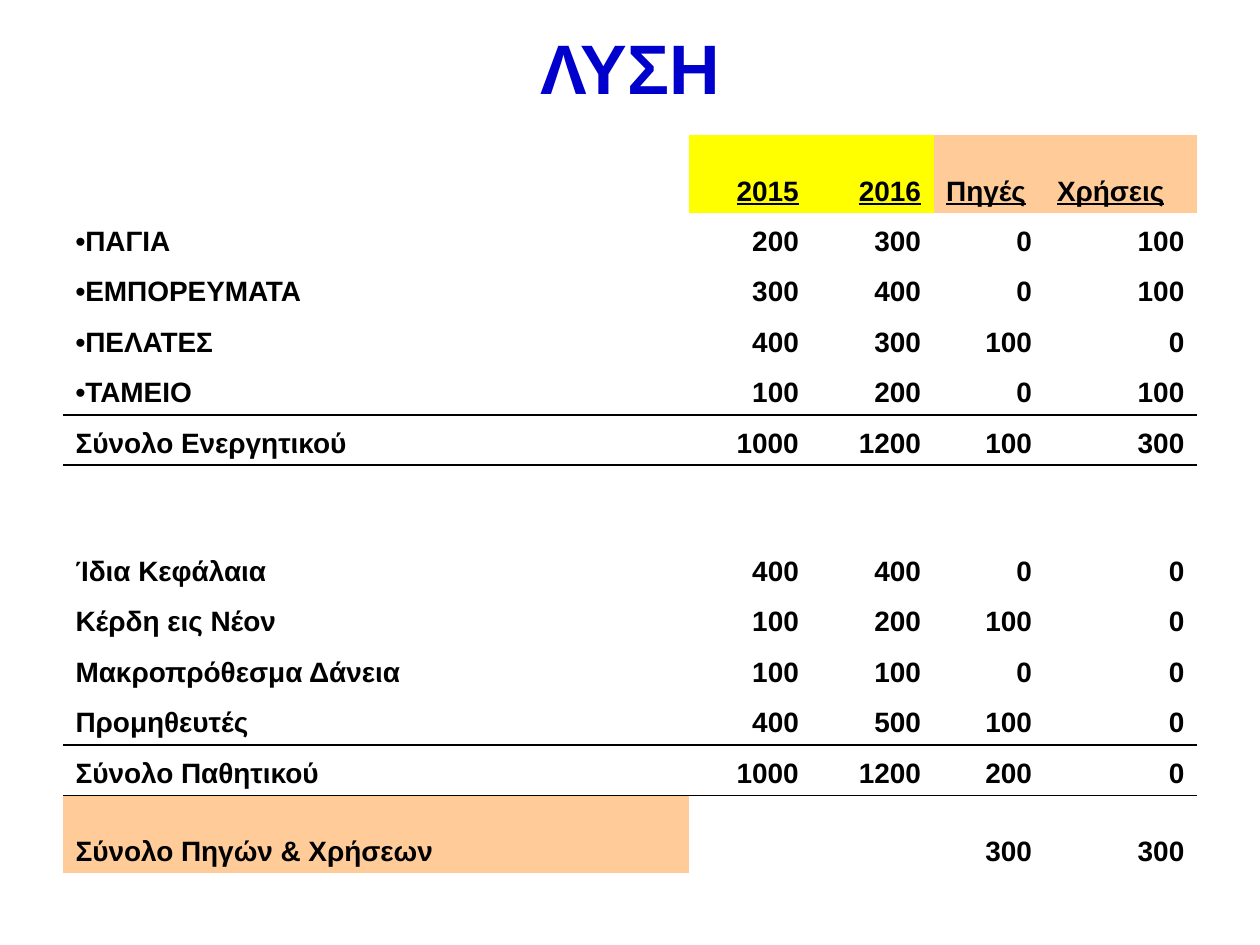
from dataclasses import dataclass

from lxml.etree import SubElement
from pptx import Presentation
from pptx.dml.color import RGBColor as RGB
from pptx.enum.text import MSO_ANCHOR as ANCHOR, MSO_AUTO_SIZE as AUTO, PP_ALIGN as ALIGN
from pptx.oxml import parse_xml
from pptx.oxml.ns import nsdecls, qn
from pptx.util import Inches, Pt


@dataclass(frozen=True)
class Theme:
    font: str = "Arial"
    title_size: int = 40
    table_size: int = 16
    title: str = "0000CC"
    text: str = "000000"
    years: str = "FFFF00"
    flows: str = "FFCC99"
    rule_width: int = 1
    hanging: float = 0.38
    plain_table: str = "{2D5ABB26-0587-4C30-8999-92F81FD0307C}"


HEADER = ("", "2015", "2016", "Πηγές", "Χρήσεις")
ROWS = [
    ("•ΠΑΓΙΑ", 200, 300, 0, 100),
    ("•ΕΜΠΟΡΕΥΜΑΤΑ", 300, 400, 0, 100),
    ("•ΠΕΛΑΤΕΣ", 400, 300, 100, 0),
    ("•ΤΑΜΕΙΟ", 100, 200, 0, 100),
    ("Σύνολο Ενεργητικού", 1000, 1200, 100, 300),
    ("",) * 5,
    ("Ίδια Κεφάλαια", 400, 400, 0, 0),
    ("Κέρδη εις Νέον", 100, 200, 100, 0),
    ("Μακροπρόθεσμα Δάνεια", 100, 100, 0, 0),
    ("Προμηθευτές", 400, 500, 100, 0),
    ("Σύνολο Παθητικού", 1000, 1200, 200, 0),
    ("Σύνολο Πηγών & Χρήσεων", "", "", 300, 300),
]
COL_WIDTHS = (4.97, 0.97, 0.97, 0.88, 1.21)
ROW_HEIGHT, TALL_ROW = 0.4, 0.62
TALL_ROWS = (0, 6, 12)
SUBTOTAL_ROWS = (5, 11)


class SlideBuilder:
    def __init__(self, prs, theme):
        self.prs, self.theme = prs, theme
        self.slide = prs.slides.add_slide(prs.slide_layouts[5])

    def box(self, x, y, w, h):
        """Turn shares of the slide's size into lengths."""
        width, height = self.prs.slide_width, self.prs.slide_height
        return int(x * width), int(y * height), int(w * width), int(h * height)

    def style(self, p, size, color, align, underline=None):
        p.alignment = align
        for r in p.runs:
            font = r.font
            font.name, font.size = self.theme.font, Pt(size)
            font.bold, font.underline = True, underline
            font.color.rgb = RGB.from_string(color)

    def title(self, text, x, y, w, h):
        sp = self.slide.shapes.title
        sp.left, sp.top, sp.width, sp.height = self.box(x, y, w, h)
        tf = sp.text_frame
        tf.text = text
        tf.auto_size, tf.vertical_anchor = AUTO.NONE, ANCHOR.MIDDLE
        self.style(tf.paragraphs[0], self.theme.title_size, self.theme.title, ALIGN.CENTER)

    def table(self, rows, widths, heights, x, y, w, h):
        """Add a plain table without style colours or grid lines."""
        frame = self.slide.shapes.add_table(len(rows), len(widths), *self.box(x, y, w, h))
        table = frame.table
        table.first_row = table.horz_banding = False
        table._tbl.tblPr.find(qn("a:tableStyleId")).text = self.theme.plain_table
        for column, width in zip(table.columns, widths):
            column.width = Inches(width)
        for row, height in zip(table.rows, heights):
            row.height = Inches(height)
        for i, values in enumerate(rows):
            for j, value in enumerate(values):
                is_label = j == 0 or (i == 0 and j > 2)
                self.cell(table.cell(i, j), value, ALIGN.LEFT if is_label else ALIGN.RIGHT,
                          underline=i == 0)
        return table

    def cell(self, cell, value, align, underline):
        cell.fill.background()
        cell.vertical_anchor = ANCHOR.BOTTOM
        p = cell.text_frame.paragraphs[0]
        p.text = str(value)
        self.style(p, self.theme.table_size, self.theme.text, align, underline)
        indent = Inches(self.theme.hanging)
        pPr = p._p.get_or_add_pPr()
        pPr.set("marL", str(indent))
        pPr.set("indent", str(-indent))

    def fill(self, cell, color):
        cell.fill.solid()
        cell.fill.fore_color.rgb = RGB.from_string(color)

    def rule_above(self, table, row):
        """Draw the line that both neighbouring rows share."""
        for i, side in ((row - 1, "lnB"), (row, "lnT")):
            for cell in table.rows[i].cells:
                ln = parse_xml(f'<a:{side} {nsdecls("a")} w="{Pt(self.theme.rule_width)}"/>')
                solid = SubElement(ln, qn("a:solidFill"))
                SubElement(solid, qn("a:srgbClr")).set("val", self.theme.text)
                cell._tc.get_or_add_tcPr().insert(0, ln)


def main():
    prs = Presentation()
    prs.slide_width, prs.slide_height = Inches(10), Inches(7.5)
    theme = Theme()
    builder = SlideBuilder(prs, theme)
    builder.title("ΛΥΣΗ", 0.05, 0.04, 0.9, 0.06)

    rows = [HEADER, *ROWS]
    heights = [TALL_ROW if i in TALL_ROWS else ROW_HEIGHT for i in range(len(rows))]
    table = builder.table(rows, COL_WIDTHS, heights, 0.05, 0.143, 0.9, 0.79)
    for j, color in enumerate((theme.years, theme.years, theme.flows, theme.flows), 1):
        builder.fill(table.cell(0, j), color)
    builder.fill(table.cell(len(rows) - 1, 0), theme.flows)
    for row in SUBTOTAL_ROWS:
        builder.rule_above(table, row)
    prs.save("out.pptx")


if __name__ == "__main__":
    main()
